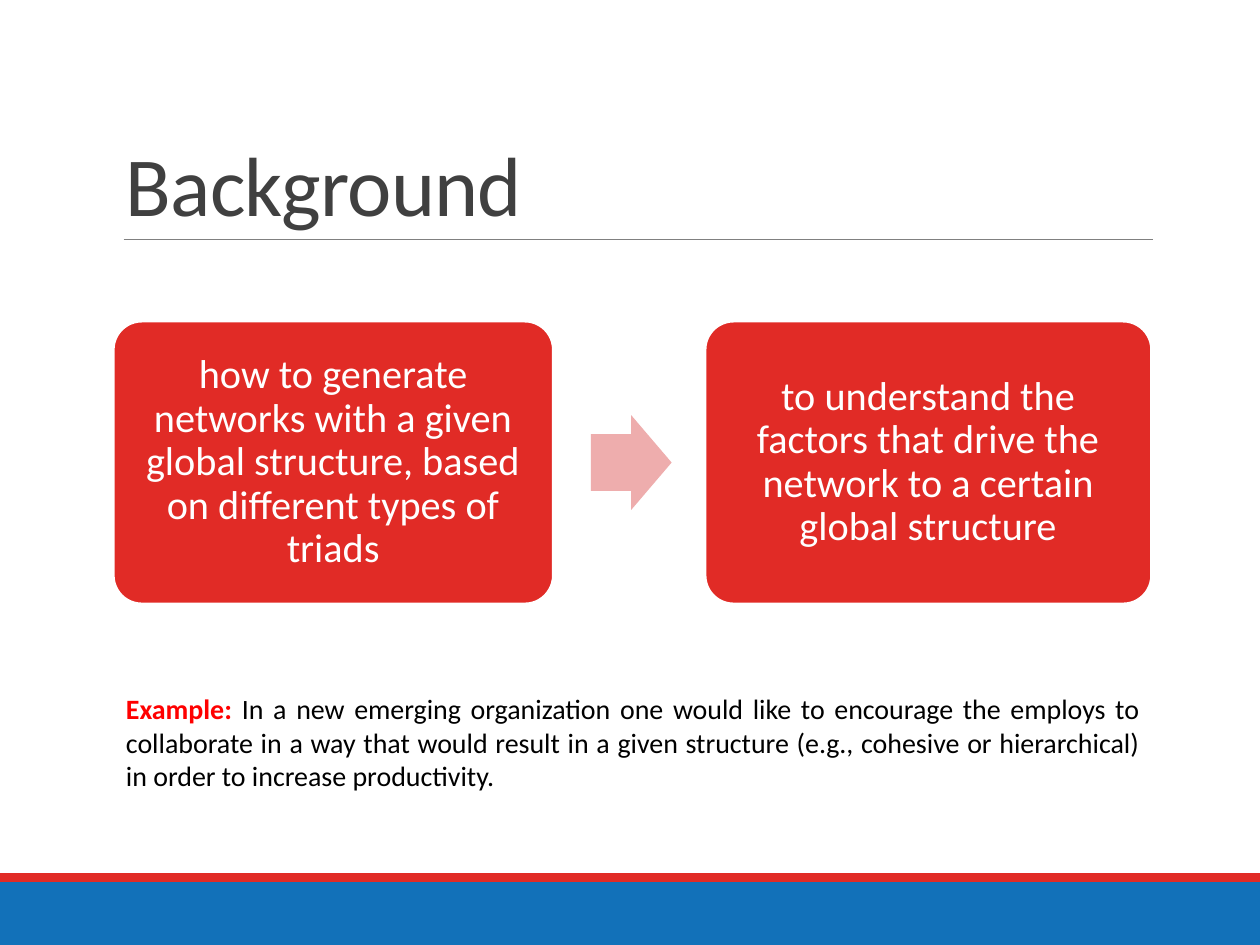
from pptx import Presentation
from pptx.dml.color import RGBColor
from pptx.enum.shapes import MSO_CONNECTOR, MSO_SHAPE as Preset
from pptx.enum.text import MSO_ANCHOR as Anchor, PP_ALIGN as Align
from pptx.oxml.ns import qn
from pptx.util import Cm, Pt

# Content
TITLE = "Background"
STEPS = [  # text, left, width in cm
    ("how to generate networks with a given global structure, "
     "based on different types of triads", 2.29, 8.86),
    ("to understand the factors that drive the network to a certain "
     "global structure", 14.22, 8.99),
]
EXAMPLE = [  # text, colour, bold
    ("Example:", "label", True),
    (" In a new emerging organization one would like to encourage the employs "
     "to collaborate in a way that would result in a given structure (e.g., "
     "cohesive or hierarchical) in order to increase productivity.", "body", False),
]
COLORS = {
    "blue": "1271B9", "red": "E12B26", "pink": "EEADAD", "white": "FFFFFF",
    "rule": "808080", "title": "404040", "label": "FF0000", "body": "000000",
}

# Layout in cm
WIDTH, HEIGHT = 25.4, 19.05
LEFT, CONTENT_WIDTH = 2.29, 20.95
STEP_TOP, STEP_HEIGHT = 6.48, 5.69
ARROW_LEFT, ARROW_WIDTH, ARROW_HEIGHT = 11.91, 1.63, 1.91
BAND_TOP, STRIPE_HEIGHT = 17.78, 0.18
INSET = 0.25


def color(name):
    return RGBColor.from_string(COLORS[name])


def apply(target, values):
    for name, value in values.items():
        setattr(target, name, value)


def add_filled(slide, preset, box, fill, outline=None, adjustments=()):
    shape = slide.shapes.add_shape(preset, *map(Cm, box))
    shape.shadow.inherit = False
    shape.fill.solid()
    shape.fill.fore_color.rgb = color(fill)
    if outline:
        shape.line.color.rgb = color(outline)
        shape.line.width = Pt(1.25)
    else:
        shape.line.fill.background()
    for index, value in enumerate(adjustments):
        shape.adjustments[index] = value
    return shape


def write(shape, runs, size, frame_format, paragraph_format):
    frame = shape.text_frame
    apply(frame, {"word_wrap": True, **frame_format})
    paragraph = frame.paragraphs[0]
    apply(paragraph, paragraph_format)
    for text, color_name, bold in runs:
        run = paragraph.add_run()
        run.text = text
        apply(run.font, {"name": "Calibri", "size": Pt(size), "bold": bold})
        run.font.color.rgb = color(color_name)
    return paragraph


presentation = Presentation()
apply(presentation, {"slide_width": Cm(WIDTH), "slide_height": Cm(HEIGHT)})
slide = presentation.slides.add_slide(presentation.slide_layouts[6])

# Footer band and stripe
add_filled(slide, Preset.RECTANGLE, (0, BAND_TOP, WIDTH, HEIGHT - BAND_TOP), "blue")
add_filled(slide, Preset.RECTANGLE,
           (0, BAND_TOP - STRIPE_HEIGHT, WIDTH, STRIPE_HEIGHT), "red")

# Title and rule
rule = slide.shapes.add_connector(
    MSO_CONNECTOR.STRAIGHT, Cm(2.49), Cm(4.83), Cm(23.24), Cm(4.83))
rule.line.color.rgb = color("rule")
rule.line.width = Pt(0.5)
rule_properties = rule._element.spPr
rule_properties.append(rule_properties.makeelement(qn("a:effectLst"), {}))

title = slide.shapes.add_textbox(*map(Cm, (LEFT, 0.79, CONTENT_WIDTH, 4.04)))
heading = write(title, [(TITLE, "title", False)], 48,
                {"vertical_anchor": Anchor.BOTTOM}, {"line_spacing": 0.85})
heading.runs[0].font._element.set("spc", "-50")

# Example
example = slide.shapes.add_textbox(*map(Cm, (LEFT, 13.82, CONTENT_WIDTH, 2.31)))
write(example, EXAMPLE, 16, {}, {"alignment": Align.JUSTIFY})

# Steps and the arrow between them
step_frame = {"vertical_anchor": Anchor.MIDDLE}
for side in ("left", "right", "top", "bottom"):
    step_frame[f"margin_{side}"] = Cm(INSET)
for text, left, width in STEPS:
    step = add_filled(slide, Preset.ROUNDED_RECTANGLE,
                      (left, STEP_TOP, width, STEP_HEIGHT), "red", "white", [0.1])
    write(step, [(text, "white", False)], 23, step_frame,
          {"alignment": Align.CENTER, "line_spacing": 0.9})

arrow_top = STEP_TOP + (STEP_HEIGHT - ARROW_HEIGHT) / 2
add_filled(slide, Preset.RIGHT_ARROW,
           (ARROW_LEFT, arrow_top, ARROW_WIDTH, ARROW_HEIGHT), "pink",
           adjustments=[0.6, 0.5])

presentation.save("out.pptx")
